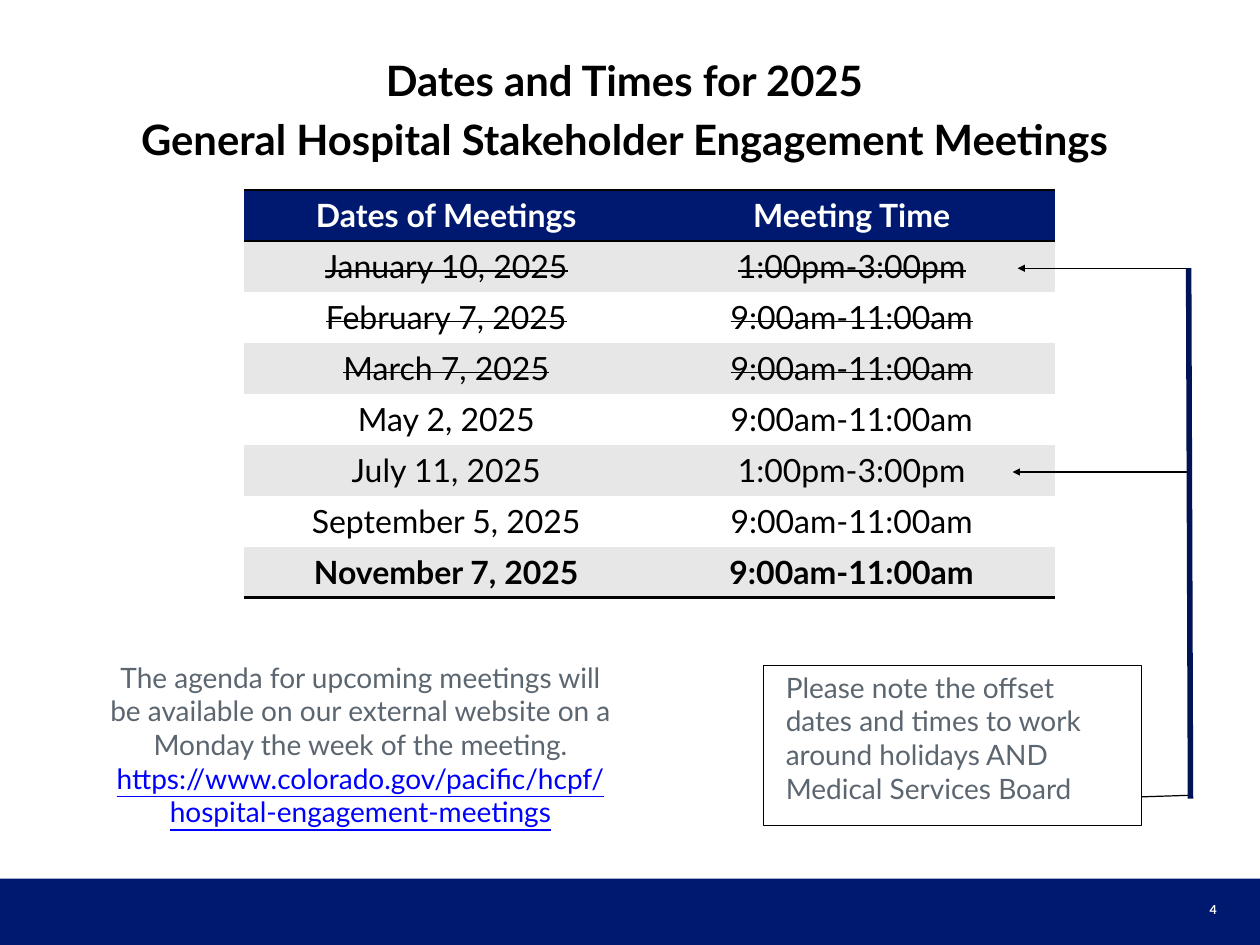
from dataclasses import dataclass

from lxml.etree import SubElement
from pptx import Presentation
from pptx.dml.color import RGBColor
from pptx.enum.shapes import MSO_CONNECTOR, MSO_SHAPE
from pptx.enum.text import MSO_ANCHOR, MSO_AUTO_SIZE, PP_ALIGN
from pptx.oxml import parse_xml
from pptx.oxml.ns import nsdecls, qn
from pptx.util import Pt


@dataclass(frozen=True)
class Theme:
    """Colours, font and type sizes of the slide."""
    navy: str = "001970"
    rail: str = "001354"
    band: str = "E7E7E7"
    white: str = "FFFFFF"
    black: str = "000000"
    grey: str = "5C6670"
    link: str = "0000FF"
    font: str = "Lato"
    title: float = 34
    table: float = 26
    body: float = 22.8
    number: float = 10.1


THEME = Theme()
NO_GRID_STYLE = "{2D5ABB26-0587-4C30-8999-92F81FD0307C}"
LATE, EARLY = "1:00pm-3:00pm", "9:00am-11:00am"
MEETINGS = [
    ("January 10, 2025", LATE, {"strike": True}),
    ("February 7, 2025", EARLY, {"strike": True}),
    ("March 7, 2025", EARLY, {"strike": True}),
    ("May 2, 2025", EARLY, {}),
    ("July 11, 2025", LATE, {}),
    ("September 5, 2025", EARLY, {}),
    ("November 7, 2025", EARLY, {"bold": True}),
]


def rgb(color):
    """Return a colour object for a hex string."""
    return RGBColor.from_string(color)


def write(p, text, size=THEME.body, color=THEME.grey, bold=False, underline=False,
          strike=False, align=PP_ALIGN.LEFT, before=0):
    """Add one formatted run to a paragraph."""
    p.alignment = align
    p.space_before = Pt(before)
    r = p.add_run()
    r.text = text
    r.font.name = THEME.font
    r.font.size = Pt(size)
    r.font.bold = bold
    r.font.underline = underline
    r.font.color.rgb = rgb(color)
    if strike:
        r.font._element.set("strike", "sngStrike")


def add_box(s, x, y, w, h, anchor=MSO_ANCHOR.TOP):
    """Add a wrapping text box and return its text frame."""
    tf = s.shapes.add_textbox(Pt(x), Pt(y), Pt(w), Pt(h)).text_frame
    tf.word_wrap = True
    tf.vertical_anchor = anchor
    return tf


def add_line(s, x1, y1, x2, y2, color=THEME.black, width=1, arrow=False):
    """Add a straight line, optionally with an arrowhead at its end."""
    cxn = s.shapes.add_connector(MSO_CONNECTOR.STRAIGHT, Pt(x1), Pt(y1), Pt(x2), Pt(y2))
    cxn.line.color.rgb = rgb(color)
    cxn.line.width = Pt(width)
    if arrow:
        SubElement(cxn.line._get_or_add_ln(), qn("a:tailEnd"), type="triangle")
    SubElement(cxn._element.spPr, qn("a:effectLst"))


def add_title(s, x, y, w, h):
    """Place the two-line title in its placeholder."""
    sp = s.shapes.title
    sp.left, sp.top, sp.width, sp.height = Pt(x), Pt(y), Pt(w), Pt(h)
    tf = sp.text_frame
    tf.word_wrap = True
    tf.auto_size = MSO_AUTO_SIZE.NONE
    tf.vertical_anchor = MSO_ANCHOR.MIDDLE
    style = dict(size=THEME.title, color=THEME.black, bold=True, align=PP_ALIGN.CENTER)
    write(tf.paragraphs[0], "Dates and Times for 2025", **style)
    write(tf.add_paragraph(), "General Hospital Stakeholder Engagement Meetings",
          before=7, **style)


def fill_cell(cell, text, fill, edges=(), **style):
    """Fill a table cell and draw the named horizontal borders."""
    cell.margin_left = cell.margin_right = Pt(10)
    cell.margin_top = cell.margin_bottom = Pt(5)
    cell.fill.solid()
    cell.fill.fore_color.rgb = rgb(fill)
    write(cell.text_frame.paragraphs[0], text, size=THEME.table,
          align=PP_ALIGN.CENTER, **style)
    tc_pr = cell._tc.get_or_add_tcPr()
    for i, edge in enumerate(edges):
        tc_pr.insert(i, parse_xml(
            f'<a:{edge} {nsdecls("a")} w="{Pt(2)}"><a:solidFill>'
            f'<a:srgbClr val="{THEME.black}"/></a:solidFill></a:{edge}>'))


def add_schedule(s, x, y, w, row_h):
    """Build the table of meeting dates and times."""
    n = len(MEETINGS) + 1
    table = s.shapes.add_table(n, 2, Pt(x), Pt(y), Pt(w), Pt(n * row_h)).table
    table._tbl.tblPr.find(qn("a:tableStyleId")).text = NO_GRID_STYLE
    table.horz_banding = False
    for row in table.rows:
        row.height = Pt(row_h)
    for col, head in enumerate(("Dates of Meetings", "Meeting Time")):
        fill_cell(table.cell(0, col), head, THEME.navy, ("lnT", "lnB"),
                  color=THEME.white, bold=True)
    for i, (date, time, style) in enumerate(MEETINGS, 1):
        edges = ("lnB",) if i == n - 1 else ()
        for col, text in enumerate((date, time)):
            fill_cell(table.cell(i, col), text, THEME.band if i % 2 else THEME.white,
                      edges, color=THEME.black, **style)


def add_agenda(s, x, y, w, h):
    """Add the agenda text with the web address below it."""
    tf = add_box(s, x, y, w, h)
    write(tf.paragraphs[0], "The agenda for upcoming meetings will be available on our "
          "external website on a Monday the week of the meeting.", align=PP_ALIGN.CENTER)
    write(tf.add_paragraph(),
          "https://www.colorado.gov/pacific/hcpf/hospital-engagement-meetings",
          color=THEME.link, underline=True, align=PP_ALIGN.CENTER)


def add_note(s, x, y, w, h):
    """Add the callout frame and the note inside it."""
    sp = s.shapes.add_shape(MSO_SHAPE.LINE_CALLOUT_3, Pt(x), Pt(y), Pt(w), Pt(h))
    sp.shadow.inherit = False
    sp.rotation = 180
    sp.fill.background()
    sp.line.color.rgb = rgb(THEME.black)
    sp.line.width = Pt(1)
    for i, value in enumerate((0.18, 0, 0.19, -0.13, 0.68, -0.13, 3.03, -0.13)):
        sp.adjustments[i] = value
    tf = add_box(s, x + 11, y, w - 20, h - 13)
    write(tf.paragraphs[0], "Please note the offset dates and times to work around "
          "holidays AND Medical Services Board")


def add_rail(s, x, y, h, gap):
    """Draw the thick rail and its arrows to the two offset meetings."""
    for drop, reach in ((gap, 143), (0, 139)):
        add_line(s, x, y + drop, x - reach, y + drop, arrow=True)
    add_line(s, x, y, x + 1.5, y + h, color=THEME.rail, width=4.5)


def add_footer(s, x, y, w, h):
    """Add the bottom bar and the slide number."""
    sp = s.shapes.add_shape(MSO_SHAPE.RECTANGLE, Pt(x), Pt(y), Pt(w), Pt(h))
    sp.shadow.inherit = False
    sp.fill.solid()
    sp.fill.fore_color.rgb = rgb(THEME.navy)
    sp.line.fill.background()
    tf = add_box(s, x + w - 197, y + 5, 169, 41, MSO_ANCHOR.MIDDLE)
    write(tf.paragraphs[0], "4", size=THEME.number, color=THEME.white, bold=True,
          align=PP_ALIGN.RIGHT)


def main():
    """Build the slide and save it."""
    prs = Presentation()
    prs.slide_width, prs.slide_height = Pt(1024), Pt(768)
    s = prs.slides.add_slide(prs.slide_layouts[5])
    add_footer(s, 0, 714, 1024, 54)
    add_title(s, 38, 29, 939, 120)
    add_schedule(s, 198, 154.5, 659, 41.4)
    add_agenda(s, 78, 533, 430, 186)
    add_note(s, 620.5, 541, 307, 130)
    add_rail(s, 966, 218, 431, 4 * 41.4)
    prs.save("out.pptx")


if __name__ == "__main__":
    main()
